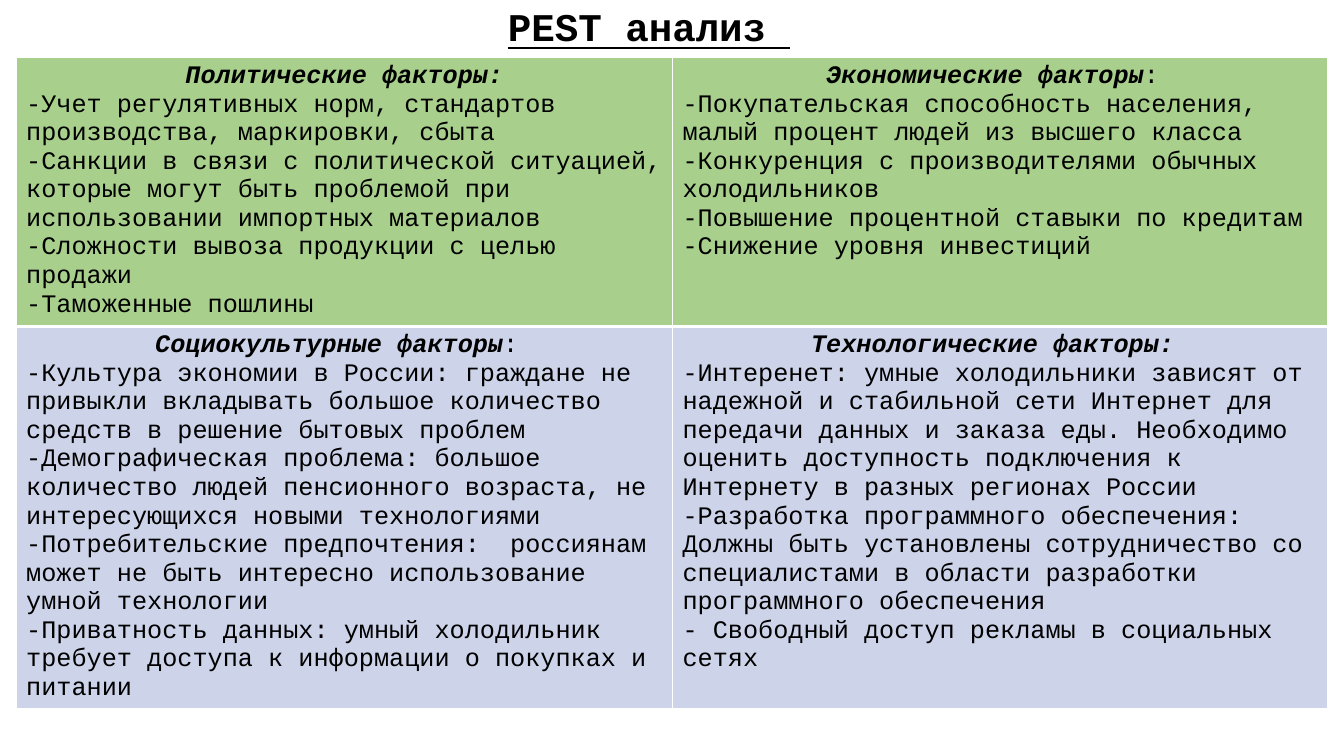
from lxml.etree import SubElement
from pptx import Presentation
from pptx.dml.color import RGBColor
from pptx.enum.text import MSO_ANCHOR, MSO_AUTO_SIZE, PP_ALIGN
from pptx.oxml.ns import qn
from pptx.util import Inches, Pt

COLORS = {"text": "000000", "border": "FFFFFF", "top": "A8D08C", "bottom": "CDD4EA"}
FONT = "Courier New"
TITLE_FORMAT = {"size": Pt(28), "bold": True, "underline": True}
HEADING_FORMAT = {"size": Pt(18), "bold": True, "italic": True}
BODY_FORMAT = {"size": Pt(18), "bold": False, "italic": False}

# Each factor: heading, plain ending of the heading, points
FACTORS = [
    [
        ("Политические факторы:", "", [
            "-Учет регулятивных норм, стандартов производства, маркировки, сбыта",
            "-Санкции в связи с политической ситуацией, которые могут быть проблемой "
            "при использовании импортных материалов",
            "-Сложности вывоза продукции с целью продажи",
            "-Таможенные пошлины",
        ]),
        ("Экономические факторы", ": ", [
            "-Покупательская способность населения, малый процент людей из высшего класса",
            "-Конкуренция с производителями обычных холодильников",
            "-Повышение процентной ставыки по кредитам",
            "-Снижение уровня инвестиций",
        ]),
    ],
    [
        ("Социокультурные факторы", ": ", [
            "-Культура экономии в России: граждане не привыкли вкладывать большое "
            "количество средств в решение бытовых проблем",
            "-Демографическая проблема: большое количество людей пенсионного возраста, "
            "не интересующихся новыми технологиями",
            "-Потребительские предпочтения:  россиянам может не быть интересно "
            "использование умной технологии",
            "-Приватность данных: умный холодильник требует доступа к информации "
            "о покупках и питании",
        ]),
        ("Технологические факторы: ", "", [
            "-Интеренет: умные холодильники зависят от надежной и стабильной сети "
            "Интернет для передачи данных и заказа еды. Необходимо оценить доступность "
            "подключения к Интернету в разных регионах России",
            "-Разработка программного обеспечения: Должны быть установлены сотрудничество "
            "со специалистами в области разработки программного обеспечения",
            "- Свободный доступ рекламы в социальных сетях",
        ]),
    ],
]


def add_run(paragraph, text, font_format):
    run = paragraph.add_run()
    run.text = text
    run.font.name = FONT
    run.font.color.rgb = RGBColor.from_string(COLORS["text"])
    for name, value in font_format.items():
        setattr(run.font, name, value)


def add_title(slide, left, top, width, height):
    title = slide.shapes.title
    title.left, title.top = Inches(left), Inches(top)
    title.width, title.height = Inches(width), Inches(height)
    frame = title.text_frame
    frame.auto_size = MSO_AUTO_SIZE.NONE
    frame.vertical_anchor = MSO_ANCHOR.MIDDLE
    paragraph = frame.paragraphs[0]
    paragraph.alignment = PP_ALIGN.CENTER
    paragraph.line_spacing = 0.9
    add_run(paragraph, "PEST анализ ", TITLE_FORMAT)


def set_borders(cell, widths):
    """Draw borders; widths maps the sides L, R, T, B, in this order, to points."""
    properties = cell._tc.get_or_add_tcPr()
    for index, (side, width) in enumerate(widths.items()):
        line = SubElement(properties, qn(f"a:ln{side}"), w=str(Pt(width)))
        fill = SubElement(line, qn("a:solidFill"))
        SubElement(fill, qn("a:srgbClr"), val=COLORS["border"])
        properties.insert(index, line)


def fill_cell(cell, factor, color):
    heading, ending, points = factor
    cell.fill.solid()
    cell.fill.fore_color.rgb = RGBColor.from_string(color)
    frame = cell.text_frame
    paragraph = frame.paragraphs[0]
    paragraph.alignment = PP_ALIGN.CENTER
    add_run(paragraph, heading, HEADING_FORMAT)
    if ending:
        add_run(paragraph, ending, BODY_FORMAT)
    for point in points:
        add_run(frame.add_paragraph(), point, BODY_FORMAT)


def add_factor_table(slide, left, top, column_widths, row_heights):
    table = slide.shapes.add_table(
        len(row_heights), len(column_widths), Inches(left), Inches(top),
        Inches(sum(column_widths)), Inches(sum(row_heights))).table
    table.first_row = table.horz_banding = False
    for column, width in zip(table.columns, column_widths):
        column.width = Inches(width)
    for row, height in zip(table.rows, row_heights):
        row.height = Inches(height)
    row_styles = [
        (COLORS["top"], {"L": 1, "R": 1, "T": 1, "B": 3}),
        (COLORS["bottom"], {"L": 1, "R": 1, "T": 3, "B": 1}),
    ]
    for row, factors, (color, widths) in zip(table.rows, FACTORS, row_styles):
        for cell, factor in zip(row.cells, factors):
            fill_cell(cell, factor, color)
            set_borders(cell, widths)


def main():
    presentation = Presentation()
    presentation.slide_width = Inches(13.33)
    presentation.slide_height = Inches(7.5)
    slide = presentation.slides.add_slide(presentation.slide_layouts.get_by_name("Title Only"))
    add_title(slide, 1.64, 0.12, 9.59, 0.34)
    add_factor_table(slide, 0.16, 0.57, [6.51, 6.5], [2.67, 3.77])
    presentation.save("out.pptx")


if __name__ == "__main__":
    main()
